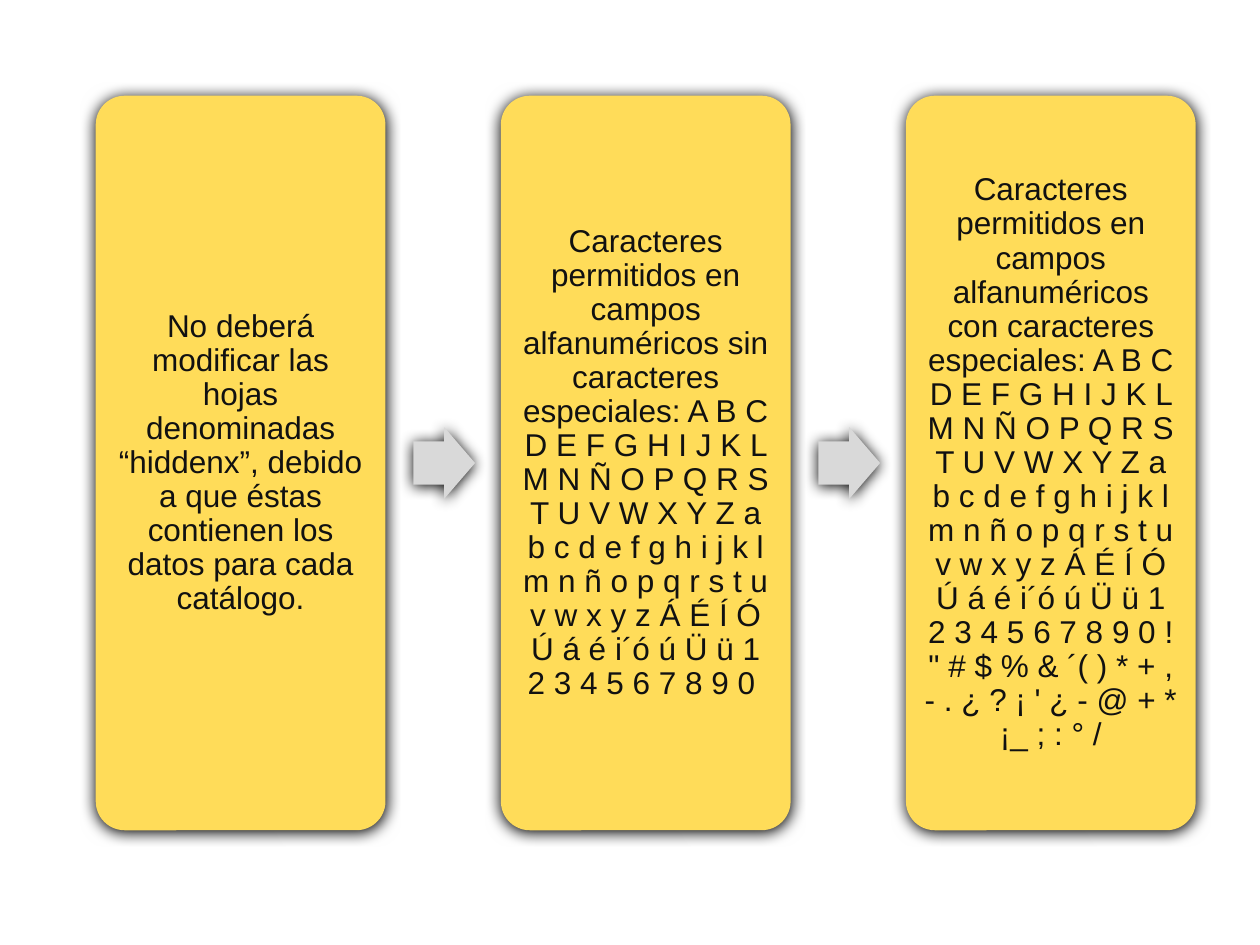
from dataclasses import dataclass

import pptx
import pptx.dml.color
import pptx.enum.shapes
import pptx.enum.text
import pptx.oxml.ns
import pptx.util
from lxml import etree
from pptx.util import Inches

SHAPE = pptx.enum.shapes.MSO_SHAPE


@dataclass(frozen=True)
class Theme:
    card: str = "FFDC59"
    arrow: str = "D9D9D9"
    text: str = "111111"
    shadow: str = "000000"
    font: str = "Arial"
    text_size: float = 18
    shadow_blur: float = 8.5
    shadow_distance: float = 1


@dataclass(frozen=True)
class Box:
    left: float
    top: float
    width: float
    height: float


THEME = Theme()
FIRST_CARD = Box(0.76, 0.76, 2.3, 5.83)
LAST_CARD_LEFT = 7.19
ARROW_WIDTH, ARROW_HEIGHT, ARROW_GAP = 0.49, 0.57, 0.22
CARD_INSET = 0.07

LETTERS_AND_DIGITS = (
    "A B C D E F G H I J K L M N Ñ O P Q R S T U V W X Y Z "
    "a b c d e f g h i j k l m n ñ o p q r s t u v w x y z "
    "Á É Í Ó Ú á é i´ó ú Ü ü 1 2 3 4 5 6 7 8 9 0 "
)
RULES = (
    "No deberá modificar las hojas denominadas “hiddenx”, debido a que éstas "
    "contienen los datos para cada catálogo.",
    "Caracteres permitidos en campos alfanuméricos sin caracteres especiales: "
    + LETTERS_AND_DIGITS,
    "Caracteres permitidos en campos alfanuméricos con caracteres especiales: "
    + LETTERS_AND_DIGITS
    + "! \" # $ % & ´( ) * + , - . ¿ ? ¡ ' ¿ - @ + * ¡_ ; : ° /",
)


def rgb(value: str) -> pptx.dml.color.RGBColor:
    return pptx.dml.color.RGBColor.from_string(value)


def add_soft_shadow(shape) -> None:
    """Replace the inherited shadow with a blurred one falling downwards."""
    qn = pptx.oxml.ns.qn
    shape.shadow.inherit = False
    effects = shape.element.spPr.find(qn("a:effectLst"))
    shadow = etree.SubElement(
        effects,
        qn("a:outerShdw"),
        blurRad=str(pptx.util.Pt(THEME.shadow_blur)),
        dist=str(pptx.util.Pt(THEME.shadow_distance)),
        dir=str(90 * 60000),
        rotWithShape="0",
    )
    etree.SubElement(shadow, qn("a:srgbClr"), val=THEME.shadow)


def add_raised_shape(slide, preset, box: Box, fill: str, adjustments: tuple[float, ...]):
    shape = slide.shapes.add_shape(
        preset, Inches(box.left), Inches(box.top), Inches(box.width), Inches(box.height)
    )
    for index, adjustment in enumerate(adjustments):
        shape.adjustments[index] = adjustment
    shape.fill.solid()
    shape.fill.fore_color.rgb = rgb(fill)
    shape.line.fill.background()
    add_soft_shadow(shape)
    return shape


def add_rule_card(slide, box: Box, rule: str) -> None:
    card = add_raised_shape(slide, SHAPE.ROUNDED_RECTANGLE, box, THEME.card, (0.1,))
    frame = card.text_frame
    frame.word_wrap = True
    frame.vertical_anchor = pptx.enum.text.MSO_ANCHOR.MIDDLE
    frame.margin_left = frame.margin_right = Inches(CARD_INSET)
    frame.margin_top = frame.margin_bottom = Inches(CARD_INSET)
    paragraph = frame.paragraphs[0]
    paragraph.text = rule
    paragraph.alignment = pptx.enum.text.PP_ALIGN.CENTER
    paragraph.line_spacing = 0.9
    paragraph.font.name = THEME.font
    paragraph.font.size = pptx.util.Pt(THEME.text_size)
    paragraph.font.color.rgb = rgb(THEME.text)


def add_arrow_after(slide, card: Box) -> None:
    arrow = Box(
        card.left + card.width + ARROW_GAP,
        card.top + (card.height - ARROW_HEIGHT) / 2,
        ARROW_WIDTH,
        ARROW_HEIGHT,
    )
    add_raised_shape(slide, SHAPE.RIGHT_ARROW, arrow, THEME.arrow, (0.6, 0.5))


def main() -> None:
    presentation = pptx.Presentation()
    presentation.slide_width, presentation.slide_height = Inches(10), Inches(7.5)
    slide = presentation.slides.add_slide(presentation.slide_layouts[6])

    pitch = (LAST_CARD_LEFT - FIRST_CARD.left) / (len(RULES) - 1)
    for index, rule in enumerate(RULES):
        card = Box(
            FIRST_CARD.left + index * pitch,
            FIRST_CARD.top,
            FIRST_CARD.width,
            FIRST_CARD.height,
        )
        add_rule_card(slide, card, rule)
        if index < len(RULES) - 1:
            add_arrow_after(slide, card)

    presentation.save("out.pptx")


if __name__ == "__main__":
    main()
